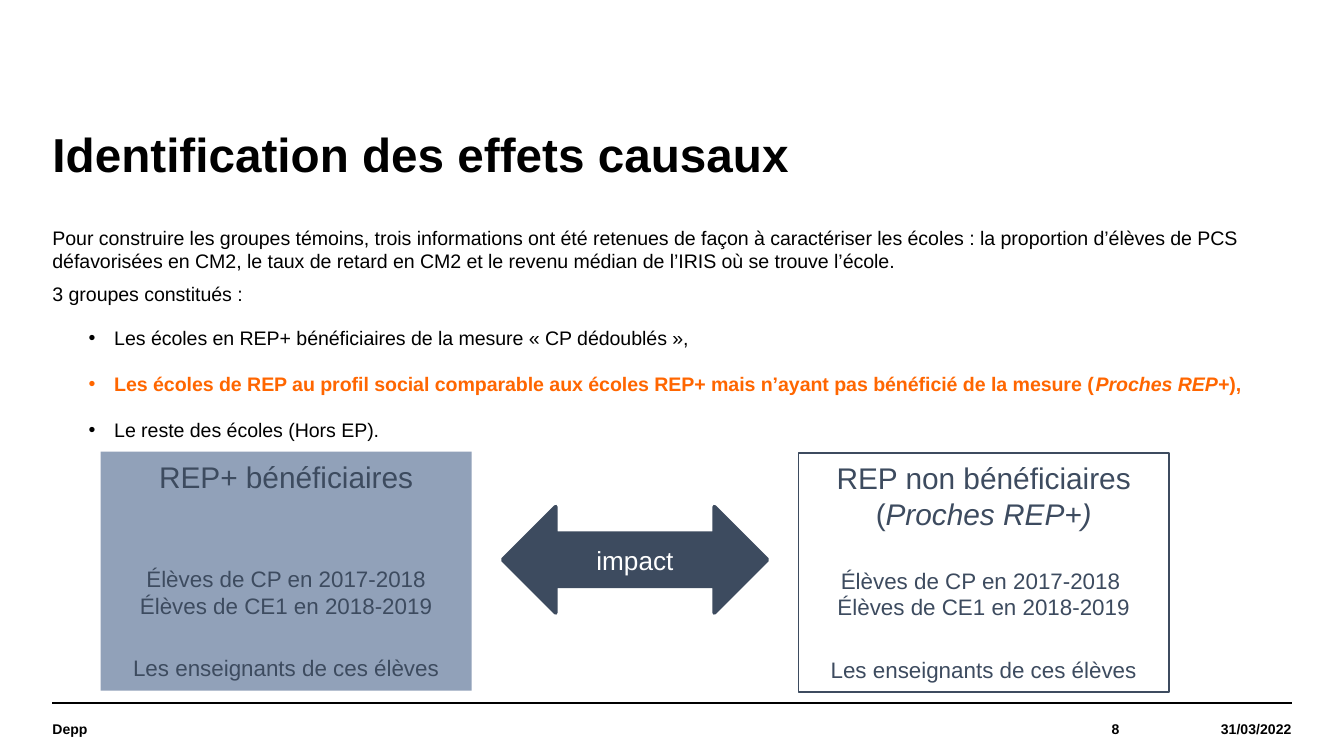
"""Build the slide on identifying causal effects with matched school groups."""
from lxml import etree
from pptx import Presentation
from pptx.dml.color import RGBColor
from pptx.enum.shapes import MSO_CONNECTOR, MSO_SHAPE
from pptx.enum.text import MSO_ANCHOR, MSO_AUTO_SIZE, PP_ALIGN
from pptx.oxml.ns import qn
from pptx.util import Inches, Pt

BLACK = RGBColor(0x00, 0x00, 0x00)
WHITE = RGBColor(0xFF, 0xFF, 0xFF)
ORANGE = RGBColor(0xFF, 0x66, 0x00)
SLATE = RGBColor(0x3D, 0x4B, 0x5F)
BLUE_GREY = RGBColor(0x91, 0xA1, 0xB9)
LEFT, CENTER, RIGHT = PP_ALIGN.LEFT, PP_ALIGN.CENTER, PP_ALIGN.RIGHT
TOP, MIDDLE = MSO_ANCHOR.TOP, MSO_ANCHOR.MIDDLE
RECTANGLE, DOUBLE_ARROW = MSO_SHAPE.RECTANGLE, MSO_SHAPE.LEFT_RIGHT_ARROW
STRAIGHT, NO_AUTOFIT = MSO_CONNECTOR.STRAIGHT, MSO_AUTO_SIZE.NONE
MARGIN, CONTENT_WIDTH, FOOTER_TOP = 0.39, 9.21, 5.23


def prepare_frame(shape, anchor, inset_x=0, inset_y=0):
    frame = shape.text_frame
    frame.word_wrap = True
    frame.auto_size = NO_AUTOFIT
    frame.vertical_anchor = anchor
    frame.margin_left = frame.margin_right = Inches(inset_x)
    frame.margin_top = frame.margin_bottom = Inches(inset_y)
    return frame


def add_spans(para, spans, size, color, bold=False, align=LEFT):
    para.alignment = align
    for text, italic in spans:
        span = para.add_run()
        span.text = text
        span.font.name = "Arial"
        span.font.size = Pt(size)
        span.font.color.rgb = color
        span.font.bold = bold
        span.font.italic = italic


deck = Presentation()
deck.slide_width = Inches(10)
deck.slide_height = deck.slide_width * 9 // 16
page = deck.slides.add_slide(deck.slide_layouts[1])

rule = page.shapes.add_connector(
    STRAIGHT, Inches(MARGIN), Inches(FOOTER_TOP), Inches(9.61), Inches(FOOTER_TOP)
)
rule.line.color.rgb = BLACK
rule.line.width = Pt(0.8)
etree.SubElement(rule._element.spPr, qn("a:effectLst"))

title = page.shapes.title
title.left, title.top = Inches(MARGIN), Inches(0.98)
title.width, title.height = Inches(CONTENT_WIDTH), Inches(0.49)
para = prepare_frame(title, TOP).paragraphs[0]
para.line_spacing = 0.9
add_spans(para, [("Identification des effets causaux", False)], 25.5, BLACK, True)

FOOTERS = [
    ("Depp", MARGIN, 6.46, LEFT),
    ("8", 6.85, 1.48, RIGHT),
    ("31/03/2022", 8.33, 1.28, RIGHT),
]
for text, left, width, align in FOOTERS:
    box = page.shapes.add_textbox(
        Inches(left), Inches(FOOTER_TOP), Inches(width), Inches(0.39)
    )
    para = prepare_frame(box, MIDDLE).paragraphs[0]
    add_spans(para, [(text, False)], 7.5, BLACK, True, align)

FIRST_YEAR, SECOND_YEAR = "Élèves de CP en 2017-2018 ", "Élèves de CE1 en 2018-2019"
TEACHERS = "Les enseignants de ces élèves"
GROUPS = [
    (0.75, 3.36, BLUE_GREY, [("REP+ bénéficiaires", False)],
     [(FIRST_YEAR + SECOND_YEAR, 38), (TEACHERS, 19)]),
    (5.94, 3.37, None, [("REP non bénéficiaires (", False), ("Proches REP+)", True)],
     [(FIRST_YEAR, 19), (SECOND_YEAR, 0), (TEACHERS, 19)]),
]
for left, top, fill, heading, lines in GROUPS:
    box = page.shapes.add_shape(
        RECTANGLE, Inches(left), Inches(top), Inches(2.76), Inches(1.78)
    )
    box.shadow.inherit = False
    if fill:
        box.fill.solid()
        box.fill.fore_color.rgb = fill
        box.line.fill.background()
    else:
        box.fill.background()
        box.line.color.rgb = SLATE
        box.line.width = Pt(0.75)
    frame = prepare_frame(box, TOP, 0.1, 0.05)
    add_spans(frame.paragraphs[0], heading, 16, SLATE, align=CENTER)
    for text, space in lines:
        para = frame.add_paragraph()
        para.space_before = Pt(space)
        add_spans(para, [(text, False)], 12, SLATE, align=CENTER)

arrow = page.shapes.add_shape(
    DOUBLE_ARROW, Inches(3.74), Inches(3.77), Inches(1.97), Inches(0.79)
)
arrow.shadow.inherit = False
arrow.fill.solid()
arrow.fill.fore_color.rgb = SLATE
arrow.line.color.rgb = SLATE
arrow.line.width = Pt(2)
para = prepare_frame(arrow, MIDDLE, 0.1, 0.05).paragraphs[0]
add_spans(para, [("impact", False)], 14, WHITE, align=CENTER)

body = page.placeholders[1]
body.left, body.top = Inches(MARGIN), Inches(1.68)
body.width, body.height = Inches(CONTENT_WIDTH), Inches(0.63)
frame = prepare_frame(body, TOP)
CRITERIA = (
    "Pour construire les groupes témoins, trois informations ont été retenues de façon "
    "à caractériser les écoles : la proportion d’élèves de PCS défavorisées en CM2, le "
    "taux de retard en CM2 et le revenu médian de l’IRIS où se trouve l’école."
)
COMPARABLE = (
    "Les écoles de REP au profil social comparable aux écoles REP+ "
    "mais n’ayant pas bénéficié de la mesure ("
)
BODY = [
    (0, [(CRITERIA, False)], BLACK),
    (0, [("3 groupes constitués :", False)], BLACK),
    (1, [("Les écoles en REP+ bénéficiaires de la mesure « CP dédoublés »,", False)], BLACK),
    (1, [(COMPARABLE, False), ("Proches REP+", True), ("),", False)], ORANGE),
    (1, [("Le reste des écoles (Hors EP).", False)], BLACK),
]
for index, (level, spans, color) in enumerate(BODY):
    para = frame.add_paragraph() if index else frame.paragraphs[0]
    para.level = level
    para.space_before = Pt(6 * level)
    para.space_after = Pt(5 + level)
    properties = para._p.get_or_add_pPr()
    properties.set("marL", str(Inches(0.46 * level)))
    properties.set("indent", str(Inches(-0.19 * level)))
    if level:
        etree.SubElement(properties, qn("a:buFont"), typeface="Arial")
        etree.SubElement(properties, qn("a:buChar"), char="•")
    else:
        etree.SubElement(properties, qn("a:buNone"))
    add_spans(para, spans, 10.5, color, color == ORANGE)

deck.save("out.pptx")
